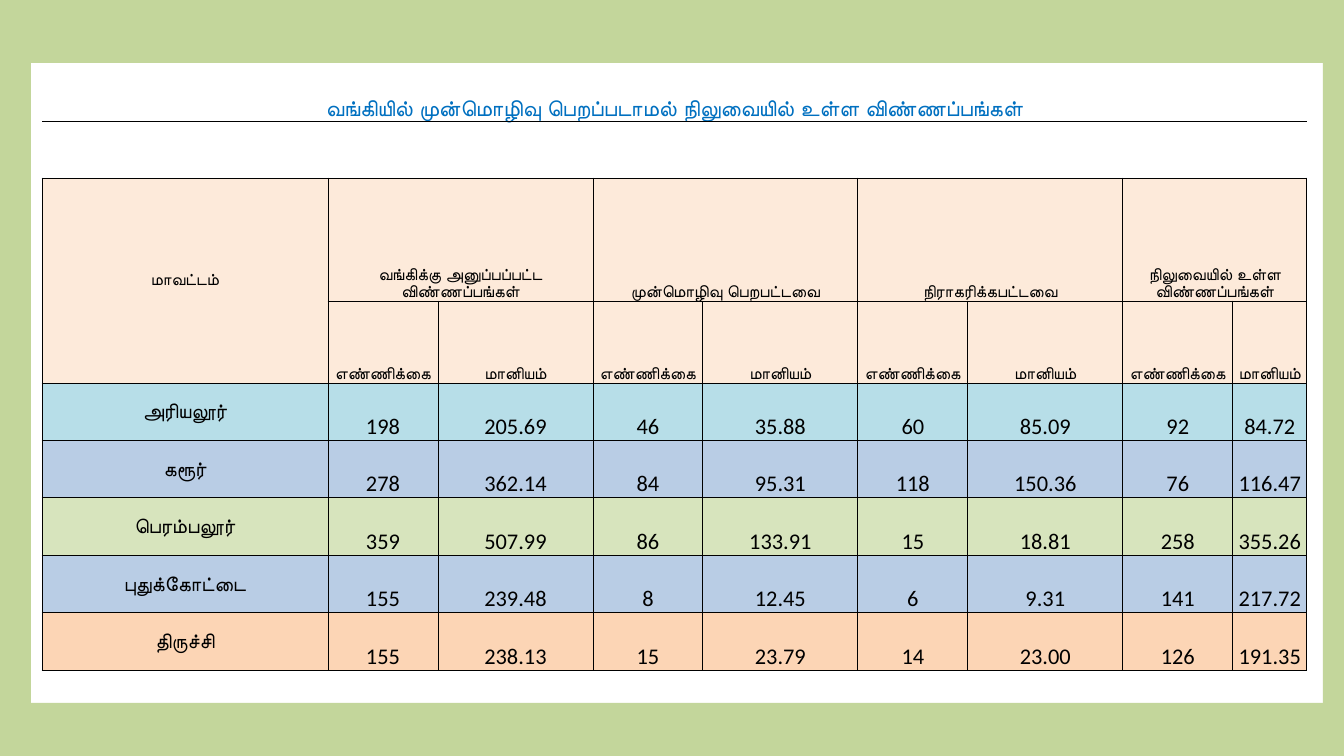
from lxml import etree
from pptx import Presentation
from pptx.dml.color import RGBColor
from pptx.enum.shapes import MSO_SHAPE
from pptx.enum.text import MSO_ANCHOR, PP_ALIGN
from pptx.oxml.ns import qn
from pptx.util import Emu, Pt

RECT = MSO_SHAPE.RECTANGLE
MIDDLE, BOTTOM = MSO_ANCHOR.MIDDLE, MSO_ANCHOR.BOTTOM
CENTER = PP_ALIGN.CENTER
SCALE = 914400 / 134.4
PLAIN = "{2D5ABB26-0587-4C30-8999-92F81FD0307C}"  # no style, no grid

WIDE, HIGH = 1344, 756
COLS = [286] + [110, 155] * 3 + [110, 74]
ROWS = [58, 57, 123, 82, 58, 57, 58, 57, 58]

TITLE = "வங்கியில் முன்மொழிவு பெறப்படாமல் நிலுவையில் உள்ள விண்ணப்பங்கள்"
GROUPS = ["வங்கிக்கு அனுப்பப்பட்ட விண்ணப்பங்கள்", "முன்மொழிவு பெறபட்டவை",
          "நிராகரிக்கபட்டவை", "நிலுவையில் உள்ள விண்ணப்பங்கள்"]
HEADS = ["எண்ணிக்கை", "மானியம்"] * len(GROUPS)
DATA = [
    ("B7DEE8", "அரியலூர்", "198 205.69 46 35.88 60 85.09 92 84.72"),
    ("B9CDE5", "கரூர்", "278 362.14 84 95.31 118 150.36 76 116.47"),
    ("D7E4BD", "பெரம்பலூர்", "359 507.99 86 133.91 15 18.81 258 355.26"),
    ("B9CDE5", "புதுக்கோட்டை", "155 239.48 8 12.45 6 9.31 141 217.72"),
    ("FCD5B5", "திருச்சி", "155 238.13 15 23.79 14 23.00 126 191.35"),
]


def px(n):
    return Emu(round(n * SCALE))


def color(code):
    return RGBColor.from_string(code)


class Deck:
    font, ink, frame, head = "Calibri", "000000", "C3D69B", "FDEADA"

    def __init__(self):
        self.file = Presentation()
        self.file.slide_width, self.file.slide_height = px(WIDE), px(HIGH)
        self.slide = self.file.slides.add_slide(self.file.slide_layouts[6])

    def band(self, x, y, w, h):
        box = self.slide.shapes.add_shape(RECT, px(x), px(y), px(w), px(h))
        box.shadow.inherit = False
        box.fill.solid()
        box.fill.fore_color.rgb = color(self.frame)
        box.line.fill.background()

    def table(self, x, y):
        grid = self.slide.shapes.add_table(
            len(ROWS), len(COLS), px(x), px(y), px(sum(COLS)), px(sum(ROWS))).table
        grid.first_row = grid.horz_banding = False
        grid._tbl.tblPr.find(qn("a:tableStyleId")).text = PLAIN
        for col, w in zip(grid.columns, COLS):
            col.width = px(w)
        for row, h in zip(grid.rows, ROWS):
            row.height = px(h)
        return grid

    def edge(self, cell, sides):
        props = cell._tc.get_or_add_tcPr()
        for side in "LRTB":
            line = etree.SubElement(props, qn("a:ln" + side), w=str(Pt(0.5)))
            if side in sides:
                fill = etree.SubElement(line, qn("a:solidFill"))
                etree.SubElement(fill, qn("a:srgbClr"), val=self.ink)
            else:
                etree.SubElement(line, qn("a:noFill"))

    def cell(self, cell, text="", size=9, fill=None, sides="LRTB",
             ink=None, bold=False, anchor=BOTTOM):
        self.edge(cell, sides)
        if fill:
            cell.fill.solid()
            cell.fill.fore_color.rgb = color(fill)
        else:
            cell.fill.background()
        cell.margin_left = cell.margin_right = cell.margin_top = px(1)
        cell.margin_bottom = 0
        cell.vertical_anchor = anchor
        cell.text_frame.text = text
        para = cell.text_frame.paragraphs[0]
        para.alignment = CENTER
        para.font.size = Pt(size)
        for run in para.runs:
            run.font.name, run.font.size, run.font.bold = self.font, Pt(size), bold
            run.font.color.rgb = color(ink or self.ink)


def main():
    deck = Deck()
    grid = deck.table(42, 63)
    last = len(COLS) - 1

    # Title row and the open row below it
    for c in range(last + 1):
        deck.cell(grid.cell(0, c), "" if c else TITLE, 12, sides="B",
                  ink="0070C0", bold=True)
        deck.cell(grid.cell(1, c), sides="TB")
    grid.cell(0, 0).merge(grid.cell(0, last))

    # Two header rows
    tops, subs = ["மாவட்டம்"], [""]
    for name in GROUPS:
        tops += [name, ""]
    subs += HEADS
    for r, names in enumerate([tops, subs], 2):
        for c, name in enumerate(names):
            deck.cell(grid.cell(r, c), name, fill=deck.head, bold=True,
                      anchor=BOTTOM if c else MIDDLE)
    grid.cell(2, 0).merge(grid.cell(3, 0))
    for c in range(1, last, 2):
        grid.cell(2, c).merge(grid.cell(2, c + 1))

    # One row for each district
    for r, (fill, name, nums) in enumerate(DATA, 4):
        deck.cell(grid.cell(r, 0), name, 11, fill, anchor=MIDDLE)
        for c, num in enumerate(nums.split(), 1):
            deck.cell(grid.cell(r, c), num, 12, fill)

    # Frame around the slide
    deck.band(0, 0, WIDE, 63)
    deck.band(0, 0, 31, HIGH)
    deck.band(1323, 0, 21, HIGH)
    deck.band(0, 703, WIDE, 53)

    deck.file.save("out.pptx")


if __name__ == "__main__":
    main()
